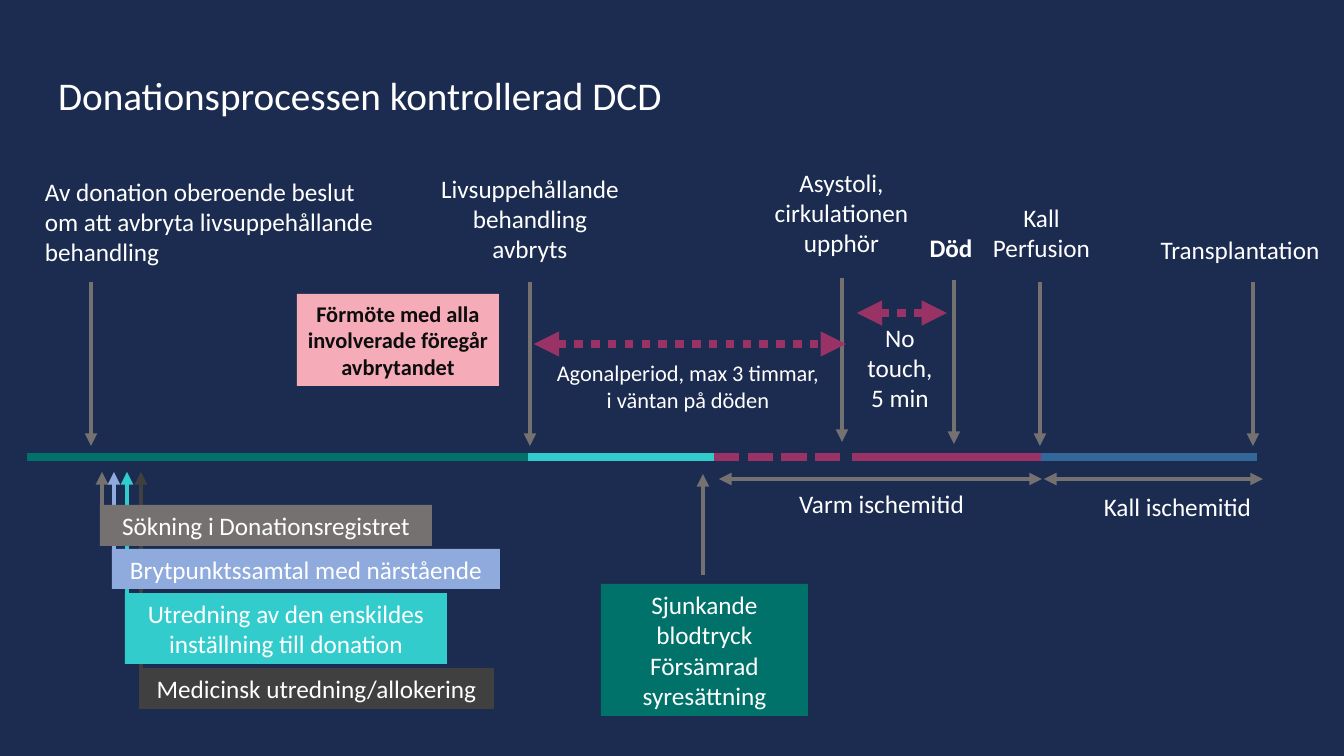
from dataclasses import dataclass

from lxml import etree
from pptx import Presentation
from pptx.dml.color import RGBColor
from pptx.enum.shapes import MSO_CONNECTOR, MSO_SHAPE
from pptx.enum.text import MSO_ANCHOR, MSO_AUTO_SIZE, PP_ALIGN
from pptx.oxml.ns import qn
from pptx.util import Emu, Pt

STRAIGHT = MSO_CONNECTOR.STRAIGHT
RECTANGLE = MSO_SHAPE.RECTANGLE
TOP, MIDDLE = MSO_ANCHOR.TOP, MSO_ANCHOR.MIDDLE
FIT_SHAPE, NO_FIT = MSO_AUTO_SIZE.SHAPE_TO_FIT_TEXT, MSO_AUTO_SIZE.NONE
LEFT, CENTER = PP_ALIGN.LEFT, PP_ALIGN.CENTER
TITLE_ONLY = 5
PX_PER_INCH = 100.8


@dataclass(frozen=True)
class Theme:
    font: str = "Calibri"
    background: str = "1C2C50"
    white: str = "FFFFFF"
    black: str = "0D0D0D"
    gray: str = "767171"
    charcoal: str = "404040"
    green: str = "00726A"
    turquoise: str = "33CCCC"
    plum: str = "993366"
    blue: str = "336699"
    periwinkle: str = "8FAADC"
    pink: str = "F5ACB8"
    title_size: int = 28
    text_size: int = 18
    small_size: int = 16
    arrow_width: int = 3
    band_width: int = 6


THEME = Theme()


def px(length):
    return Emu(round(length * 914400 / PX_PER_INCH))


def rgb(color):
    return RGBColor.from_string(color)


def write(frame, text, size=THEME.text_size, color=THEME.white, bold=False,
          align=CENTER, anchor=TOP, fit=FIT_SHAPE):
    frame.text = text
    frame.word_wrap = True
    frame.auto_size = fit
    frame.vertical_anchor = anchor
    for paragraph in frame.paragraphs:
        paragraph.alignment = align
        font = paragraph.font
        font.name, font.size, font.bold = THEME.font, Pt(size), bold
        font.color.rgb = rgb(color)


def add_label(slide, box, text, **style):
    label = slide.shapes.add_textbox(*map(px, box))
    write(label.text_frame, text, **style)


def add_box(slide, box, fill, text, **style):
    rectangle = slide.shapes.add_shape(RECTANGLE, *map(px, box))
    rectangle.shadow.inherit = False
    rectangle.fill.solid()
    rectangle.fill.fore_color.rgb = rgb(fill)
    rectangle.line.fill.background()
    write(rectangle.text_frame, text, anchor=MIDDLE, **style)


def add_line(slide, start, end, color=THEME.gray, width=THEME.arrow_width,
             dash=None, ends=("tailEnd",)):
    """Draw a line; ends names the arrowheads, headEnd before tailEnd."""
    connector = slide.shapes.add_connector(STRAIGHT, *map(px, (*start, *end)))
    connector.line.color.rgb = rgb(color)
    connector.line.width = Pt(width)
    properties = connector._element.spPr
    outline = properties.find(qn("a:ln"))
    if dash:
        etree.SubElement(outline, qn("a:prstDash"), val=dash)
    for end_name in ends:
        etree.SubElement(outline, qn(f"a:{end_name}"), type="triangle")
    etree.SubElement(properties, qn("a:effectLst"))


def add_title(slide, box, text):
    title = slide.shapes.title
    title.left, title.top, title.width, title.height = map(px, box)
    write(title.text_frame, text, size=THEME.title_size, align=LEFT, fit=NO_FIT)


def add_time_bands(slide, box):
    left, top, _, height = box
    middle = top + height // 2
    bands = [
        (473, 706, THEME.turquoise, None),
        (825, 1014, THEME.plum, None),
        (1014, 1230, THEME.blue, None),
        (687, 816, THEME.plum, "sysDash"),
        (0, 501, THEME.green, None),
    ]
    for start, end, color, dash in bands:
        add_line(slide, (left + start, middle), (left + end, middle), color,
                 THEME.band_width, dash, ends=())


def add_milestones(slide, box):
    left, top, _, height = box
    arrow_length = 164
    milestones = [
        ("Av donation oberoende beslut om att avbryta livsuppehållande behandling",
         (0, 9, 361, 102), 56, 0, {"align": LEFT}),
        ("Livsuppehållande behandling avbryts", (394, 6, 202, 102), 495, 0, {}),
        ("Asystoli, cirkulationen upphör", (718, 0, 177, 102), 807, 4, {}),
        ("Död", (832, 65, 168, 40), 919, 2, {"bold": True}),
        ("Kall Perfusion", (928, 35, 157, 72), 1005, 0, {}),
        ("Transplantation", (1103, 67, 204, 40), 1218, 0, {}),
    ]
    for text, (x, y, w, h), arrow_x, lift, style in milestones:
        tip = top + height - lift
        add_line(slide, (left + arrow_x, tip - arrow_length), (left + arrow_x, tip))
        add_label(slide, (left + x, top + y, w, h), text, **style)


def add_waiting_periods(slide, box):
    left, top, _, _ = box
    for start, end, y in ((0, 312, 32), (323, 413, 1)):
        add_line(slide, (left + start, top + y), (left + end, top + y), THEME.plum,
                 THEME.band_width, "sysDot", ("headEnd", "tailEnd"))
    add_label(slide, (left - 9, top + 42, 326, 65),
              "Agonalperiod, max 3 timmar,\ni väntan på döden", size=THEME.small_size)
    add_label(slide, (left + 310, top + 5, 112, 102), "No touch,\v5 min")


def add_ischemia_periods(slide, box):
    left, top, _, _ = box
    periods = [
        ("Varm ischemitid", 0, 323, (-14, 4, 353, 40)),
        ("Kall ischemitid", 325, 544, (361, 7, 195, 40)),
    ]
    for text, start, end, (x, y, w, h) in periods:
        add_line(slide, (left + start, top), (left + end, top),
                 ends=("headEnd", "tailEnd"))
        add_label(slide, (left + x, top + y, w, h), text)


def add_preparations(slide, box):
    left, top, _, _ = box
    steps = [
        ("Sökning i Donationsregistret", (0, 33, 332, 41), THEME.gray),
        ("Brytpunktssamtal med närstående", (12, 77, 388, 40), THEME.periwinkle),
        ("Utredning av den enskildes inställning till donation",
         (25, 121, 322, 71), THEME.turquoise),
        ("Medicinsk utredning/allokering", (39, 196, 355, 41), THEME.charcoal),
    ]
    for _, (x, y, _, _), color in steps:
        arrow_x = left + x + 2
        add_line(slide, (arrow_x, top + y + 2), (arrow_x, top), color)
    for text, (x, y, w, h), color in steps:
        add_box(slide, (left + x, top + y, w, h), color, text)


def add_deterioration(slide, box):
    left, top, width, height = box
    note_height = 132
    note_top = top + height - note_height
    arrow_x = left + width // 2 - 1
    add_line(slide, (arrow_x, note_top - 9), (arrow_x, top))
    add_box(slide, (left, note_top, width, note_height), THEME.green,
            "Sjunkande blodtryck\nFörsämrad syresättning")


def main():
    deck = Presentation()
    deck.slide_width, deck.slide_height = px(1344), px(756)
    slide = deck.slides.add_slide(deck.slide_layouts[TITLE_ONLY])
    slide.background.fill.solid()
    slide.background.fill.fore_color.rgb = rgb(THEME.background)

    add_title(slide, (48, 66, 882, 57), "Donationsprocessen kontrollerad DCD")
    add_time_bands(slide, (27, 453, 1230, 8))
    add_milestones(slide, (35, 162, 1307, 284))
    add_waiting_periods(slide, (534, 312, 422, 107))
    add_ischemia_periods(slide, (719, 479, 556, 47))
    add_preparations(slide, (100, 472, 400, 237))
    add_deterioration(slide, (601, 474, 207, 242))
    add_box(slide, (297, 294, 202, 92), THEME.pink,
            "Förmöte med alla involverade föregår\navbrytandet",
            size=THEME.small_size, color=THEME.black, bold=True)
    deck.save("out.pptx")


if __name__ == "__main__":
    main()
